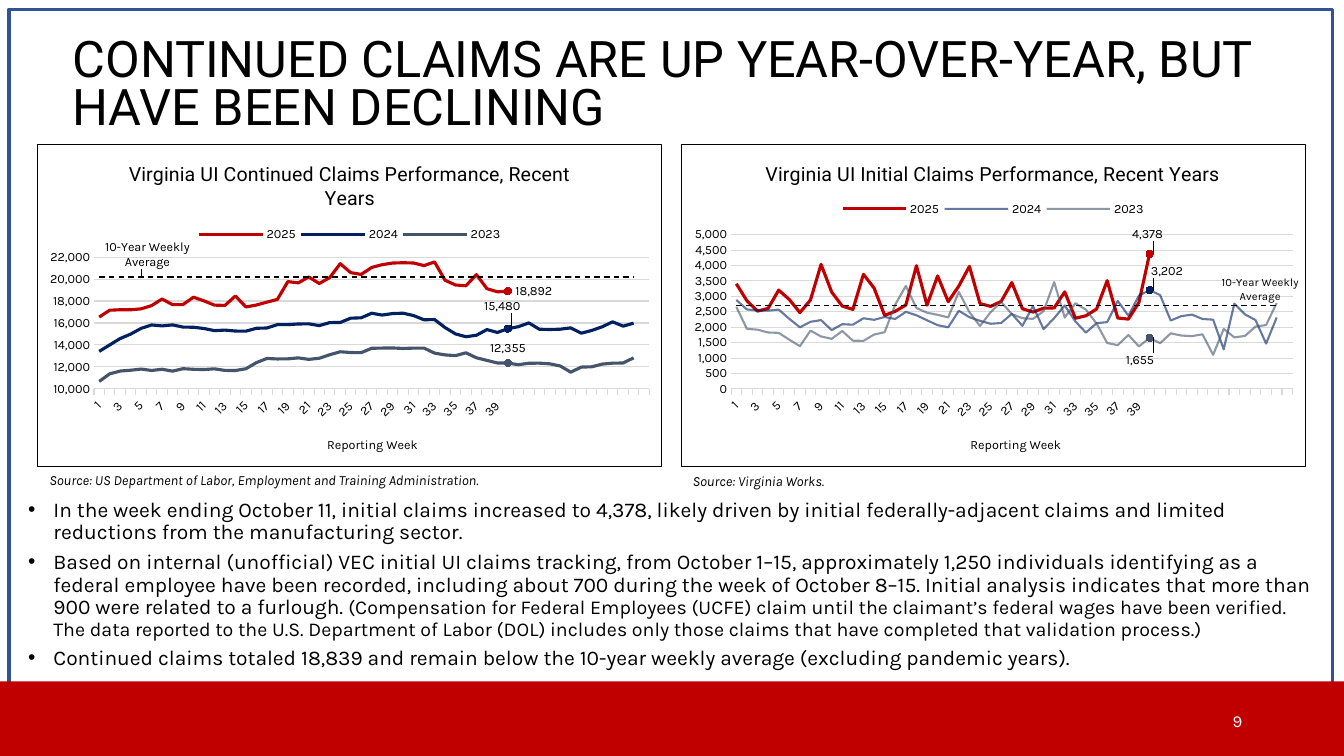
from lxml import etree
from pptx import Presentation
from pptx.chart.data import CategoryChartData
from pptx.dml.color import RGBColor
from pptx.enum.chart import XL_CHART_TYPE, XL_LABEL_POSITION, XL_LEGEND_POSITION, XL_MARKER_STYLE, XL_TICK_MARK
from pptx.enum.dml import MSO_LINE
from pptx.enum.shapes import MSO_SHAPE
from pptx.enum.text import MSO_ANCHOR, MSO_AUTO_SIZE, PP_ALIGN
from pptx.oxml import parse_xml
from pptx.util import Inches, Pt

LINE = XL_CHART_TYPE.LINE
RIGHT, ABOVE = XL_LABEL_POSITION.RIGHT, XL_LABEL_POSITION.ABOVE
COLORS = {"red": "C00000", "navy": "002060", "slate": "44546A", "black": "000000",
          "white": "FFFFFF", "grid": "D9D9D9", "frame": "2F5496"}
NAMESPACES = ('xmlns:c="http://schemas.openxmlformats.org/drawingml/2006/chart" '
              'xmlns:a="http://schemas.openxmlformats.org/drawingml/2006/main"')
WEEKS = 53
REPORTED = 40
LATEST = REPORTED - 1


def style_font(font, size, color="black", name="Karla"):
    font.size = Pt(size)
    font.name = name
    font.bold = False
    font.color.rgb = RGBColor.from_string(COLORS[color])


def layout(x, y, width=None, height=None, target="", mode="edge"):
    parts = [f'<c:layoutTarget val="{target}"/>'] if target else []
    if mode:
        parts += [f'<c:{axis}Mode val="{mode}"/>' for axis in "xy"]
    sizes = (("x", x), ("y", y), ("w", width), ("h", height))
    parts += [f'<c:{key} val="{value}"/>' for key, value in sizes if value is not None]
    return parse_xml(f'<c:layout {NAMESPACES}><c:manualLayout>{"".join(parts)}</c:manualLayout></c:layout>')


continued_2025 = [
    16539, 17161, 17203, 17201, 17288, 17579, 18179, 17671, 17681, 18349, 18013, 17625, 17598, 18459,
    17457, 17638, 17896, 18144, 19765, 19652, 20185, 19596, 20128, 21399, 20587, 20422, 21060, 21308,
    21457, 21488, 21463, 21225, 21559, 19900, 19460, 19390, 20400, 19125, 18839, 18892]
continued_2024 = [
    13415, 13999, 14586, 14987, 15511, 15817, 15736, 15827, 15629, 15612, 15497, 15302, 15351, 15263,
    15254, 15518, 15546, 15847, 15851, 15907, 15923, 15761, 16034, 16046, 16433, 16471, 16886, 16721,
    16858, 16893, 16675, 16290, 16311, 15589, 15006, 14749, 14880, 15395, 15137, 15480, 15663, 16007,
    15431, 15404, 15438, 15554, 15070, 15318, 15657, 16104, 15712, 15983]
continued_2023 = [
    10677, 11371, 11624, 11699, 11801, 11675, 11785, 11615, 11837, 11781, 11758, 11823, 11681, 11672,
    11830, 12390, 12769, 12724, 12736, 12821, 12685, 12788, 13107, 13381, 13313, 13296, 13696, 13714,
    13727, 13678, 13710, 13715, 13258, 13092, 13027, 13286, 12830, 12595, 12360, 12355, 12204, 12337,
    12341, 12283, 12083, 11522, 11984, 12007, 12258, 12341, 12357, 12827]
initial_2025 = [
    3407, 2858, 2522, 2606, 3202, 2899, 2473, 2881, 4036, 3141, 2683, 2575, 3714, 3270, 2384, 2516,
    2720, 3992, 2715, 3662, 2827, 3335, 3972, 2766, 2674, 2837, 3446, 2600, 2490, 2615, 2624, 3146,
    2289, 2372, 2589, 3509, 2298, 2262, 2803, 4378]
initial_2024 = [
    2883, 2576, 2541, 2536, 2571, 2272, 1996, 2174, 2229, 1904, 2098, 2081, 2288, 2238, 2331, 2266,
    2497, 2386, 2224, 2066, 1998, 2531, 2325, 2205, 2112, 2136, 2433, 2045, 2682, 1937, 2294, 2702,
    2185, 1826, 2129, 2164, 2852, 2371, 3025, 3202, 3039, 2215, 2359, 2408, 2265, 2244, 1284, 2764,
    2417, 2230, 1468, 2314]
initial_2023 = [
    2656, 1948, 1920, 1829, 1815, 1597, 1385, 1886, 1700, 1623, 1876, 1563, 1558, 1760, 1838, 2734,
    3336, 2621, 2470, 2401, 2317, 3142, 2486, 2038, 2487, 2816, 2424, 2293, 2269, 2520, 3460, 2311,
    2777, 2568, 2118, 1487, 1417, 1748, 1378, 1655, 1481, 1800, 1730, 1711, 1770, 1104, 1945, 1669,
    1717, 2019, 2070, 2782]

claims_charts = [
    dict(left=6.75, title="Virginia UI Initial Claims Performance, Recent Years", scale=(0, 5000, 500),
         plot=(0.08, 0.28, 0.9, 0.48), legend_top=0.17, series=[
             ("2025", initial_2025, "red", 2.25, 100, LATEST, RIGHT, (-0.04, -0.06)),
             ("2024", initial_2024, "navy", 1.5, 60, LATEST, RIGHT, (-0.01, -0.06)),
             ("2023", initial_2023, "slate", 1.5, 60, LATEST, RIGHT, (-0.05, 0.07)),
             ("10-Year Weekly Average", [2700] * 52, "black", 1, 100, 46, RIGHT, (-0.01, -0.05))]),
    dict(left=0.37, title="Virginia UI Continued Claims Performance, Recent Years", scale=(10000, 22000, 2000),
         plot=(0.09, 0.35, 0.89, 0.41), legend_top=0.25, series=[
             ("2025", continued_2025, "red", 2.25, 100, LATEST, RIGHT, None),
             ("2024", continued_2024, "navy", 2.25, 100, LATEST, RIGHT, (-0.05, -0.07)),
             ("2023", continued_2023, "slate", 2.25, 100, LATEST, ABOVE, None),
             ("Series 4", [20200] * 52, "black", 1, 100, 4, ABOVE, (0.01, -0.01))]),
]

presentation = Presentation()
presentation.slide_width = Inches(13.33)
presentation.slide_height = Inches(7.5)
slide = presentation.slides.add_slide(presentation.slide_layouts[1])

frame = slide.shapes.add_shape(MSO_SHAPE.RECTANGLE, Inches(0.09), Inches(0.09), Inches(13.13), Inches(7.01))
frame.fill.background()
frame.line.color.rgb = RGBColor.from_string(COLORS["frame"])
frame.line.width = Pt(2.25)
footer = slide.shapes.add_shape(MSO_SHAPE.RECTANGLE, 0, Inches(6.76), Inches(13.33), Inches(0.74))
footer.fill.solid()
footer.fill.fore_color.rgb = RGBColor.from_string(COLORS["red"])
footer.line.fill.background()
for position, shape in enumerate((frame, footer)):
    shape.shadow.inherit = False
    slide.shapes._spTree.insert(2 + position, shape._element)

title = slide.shapes.title
title.left, title.top, title.width, title.height = Inches(0.62), Inches(0.3), Inches(12.5), Inches(1.13)
title.text_frame.text = "CONTINUED CLAIMS ARE UP YEAR-OVER-YEAR, BUT HAVE BEEN DECLINING"
title.text_frame.vertical_anchor = MSO_ANCHOR.MIDDLE
title.text_frame.auto_size = MSO_AUTO_SIZE.NONE
title_paragraph = title.text_frame.paragraphs[0]
title_paragraph.alignment = PP_ALIGN.LEFT
title_paragraph.line_spacing = 0.8
style_font(title_paragraph.font, 36, name="Roboto")

body = slide.placeholders[1]
body.left, body.top, body.width, body.height = Inches(0.18), Inches(4.9), Inches(12.94), Inches(1.94)
body.text_frame.auto_size = MSO_AUTO_SIZE.NONE
body.text_frame.text = "\n".join([
    "In the week ending October 11, initial claims increased to 4,378, likely driven by initial federally-adjacent claims and limited reductions from the manufacturing sector.",
    "Based on internal (unofficial) VEC initial UI claims tracking, from October 1–15, approximately 1,250 individuals identifying as a federal employee have been recorded, including about 700 during the week of October 8–15. Initial analysis indicates that more than 900 were related to a furlough.",
    "Continued claims totaled 18,839 and remain below the 10-year weekly average (excluding pandemic years)."])
for paragraph in body.text_frame.paragraphs:
    paragraph.line_spacing = 0.9
    paragraph.space_before = Pt(0)
    paragraph.space_after = Pt(5)
    style_font(paragraph.font, 15)
    properties = paragraph._p.get_or_add_pPr()
    properties.set("marL", str(Inches(0.25)))
    properties.set("indent", str(Inches(-0.25)))
furlough_note = body.text_frame.paragraphs[1].add_run()
furlough_note.text = " (Compensation for Federal Employees (UCFE) claim until the claimant’s federal wages have been verified. The data reported to the U.S. Department of Labor (DOL) includes only those claims that have completed that validation process.)"
furlough_note.font.size = Pt(14)

small_texts = [
    ("Source: US Department of Labor, Employment and Training Administration.", 0.39, 4.63, 5.65, 0.27, 10, "black", PP_ALIGN.LEFT),
    ("Source: Virginia Works.", 6.77, 4.64, 5.65, 0.27, 10, "black", PP_ALIGN.LEFT),
    ("9", 9.42, 6.95, 3, 0.4, 12, "white", PP_ALIGN.RIGHT)]
for text, left, top, width, height, size, color, alignment in small_texts:
    text_box = slide.shapes.add_textbox(Inches(left), Inches(top), Inches(width), Inches(height))
    text_box.text_frame.word_wrap = True
    text_box.text_frame.vertical_anchor = MSO_ANCHOR.MIDDLE if color == "white" else MSO_ANCHOR.TOP
    paragraph = text_box.text_frame.paragraphs[0]
    paragraph.text = text
    paragraph.alignment = alignment
    style_font(paragraph.font, size, color)
    paragraph.font.italic = color == "black"

for claims in claims_charts:
    chart_data = CategoryChartData(number_format="#,##0")
    chart_data.categories = [str(week) for week in range(1, WEEKS + 1)]
    for name, values, *_ in claims["series"]:
        chart_data.add_series(name, values + [None] * (WEEKS - len(values)))
    chart = slide.shapes.add_chart(LINE, Inches(claims["left"]), Inches(1.43), Inches(6.2), Inches(3.2), chart_data).chart
    style_font(chart.font, 10)
    chart_space = chart._chartSpace
    chart_space.find("{*}txPr").addprevious(parse_xml(
        f'<c:spPr {NAMESPACES}><a:solidFill><a:srgbClr val="{COLORS["white"]}"/></a:solidFill><a:ln w="9525">'
        f'<a:solidFill><a:srgbClr val="{COLORS["black"]}"/></a:solidFill></a:ln></c:spPr>'))
    plot_area = chart_space.find(".//{*}plotArea")
    for old_layout in plot_area.findall("{*}layout"):
        plot_area.remove(old_layout)
    plot_area.insert(0, layout(*claims["plot"], target="inner"))

    chart.has_title = True
    chart.chart_title.text_frame.text = claims["title"]
    style_font(chart.chart_title.text_frame.paragraphs[0].font, 14, name="Roboto")
    chart.has_legend = True
    chart.legend.position = XL_LEGEND_POSITION.TOP
    chart.legend.include_in_layout = False
    style_font(chart.legend.font, 9)
    legend = chart.legend._element
    for old_layout in legend.findall("{*}layout"):
        legend.remove(old_layout)
    legend.insert(1, parse_xml(f'<c:legendEntry {NAMESPACES}><c:idx val="3"/><c:delete val="1"/></c:legendEntry>'))
    legend.insert(2, layout(0.25, claims["legend_top"], 0.5, 0.06))

    weeks_axis, claims_axis = chart.category_axis, chart.value_axis
    for axis in (weeks_axis, claims_axis):
        style_font(axis.tick_labels.font, 9)
    weeks_axis.major_tick_mark = XL_TICK_MARK.OUTSIDE
    weeks_axis.format.line.color.rgb = RGBColor.from_string(COLORS["grid"])
    weeks_axis.axis_title.text_frame.text = "Reporting Week"
    style_font(weeks_axis.axis_title.text_frame.paragraphs[0].font, 9)
    axis_title = weeks_axis.axis_title._element
    for old_layout in axis_title.findall("{*}layout"):
        axis_title.remove(old_layout)
    axis_title.insert(1, layout(0.46, 0.9))
    weeks_axis._element.find("{*}txPr/{*}bodyPr").set("rot", "-2700000")
    weeks_axis._element.find("{*}noMultiLvlLbl").addprevious(parse_xml(f'<c:tickLblSkip {NAMESPACES} val="2"/>'))
    claims_axis.minimum_scale, claims_axis.maximum_scale, claims_axis.major_unit = claims["scale"]
    claims_axis.major_tick_mark = XL_TICK_MARK.NONE
    claims_axis.format.line.fill.background()
    claims_axis.major_gridlines.format.line.color.rgb = RGBColor.from_string(COLORS["grid"])
    claims_axis.tick_labels.number_format = "#,##0"
    claims_axis.tick_labels.number_format_is_linked = False

    plot = chart.plots[0]
    plot.vary_by_categories = False
    for series, details in zip(plot.series, claims["series"]):
        name, values, color, width, opacity, labelled, label_position, offset = details
        series.smooth = False
        series.marker.style = XL_MARKER_STYLE.NONE
        point = series.points[labelled]
        for line in (series.format.line, point.format.line):
            line.width = Pt(width)
            line.color.rgb = RGBColor.from_string(COLORS[color])
            if color == "black":
                line.dash_style = MSO_LINE.DASH
            if opacity < 100:
                etree.SubElement(line._ln.find(".//{*}srgbClr"), "{http://schemas.openxmlformats.org/drawingml/2006/main}alpha", val=f"{opacity}000")
        point.marker.style = XL_MARKER_STYLE.NONE if color == "black" else XL_MARKER_STYLE.CIRCLE
        if color != "black":
            point.marker.size = 5
            point.marker.format.fill.solid()
            point.marker.format.fill.fore_color.rgb = RGBColor.from_string(COLORS[color])
        series.data_labels.show_value = False
        label = point.data_label
        if name == "Series 4":
            label.text_frame.text = "10-Year Weekly Average"
            style_font(label.text_frame.paragraphs[0].font, 9)
        else:
            style_font(label.font, 8 if color == "black" else 9)
        label.position = label_position
        label_element = series._element.find(".//{*}dLbl")
        if name.startswith("10-Year"):
            label_element.find("{*}showVal").set("val", "0")
            label_element.find("{*}showSerName").set("val", "1")
        if offset:
            label_element.insert(1, layout(*offset, mode=""))
    for category in plot.series[0]._element.findall("{*}cat//{*}pt")[REPORTED:]:
        category.getparent().remove(category)

presentation.save("out.pptx")
